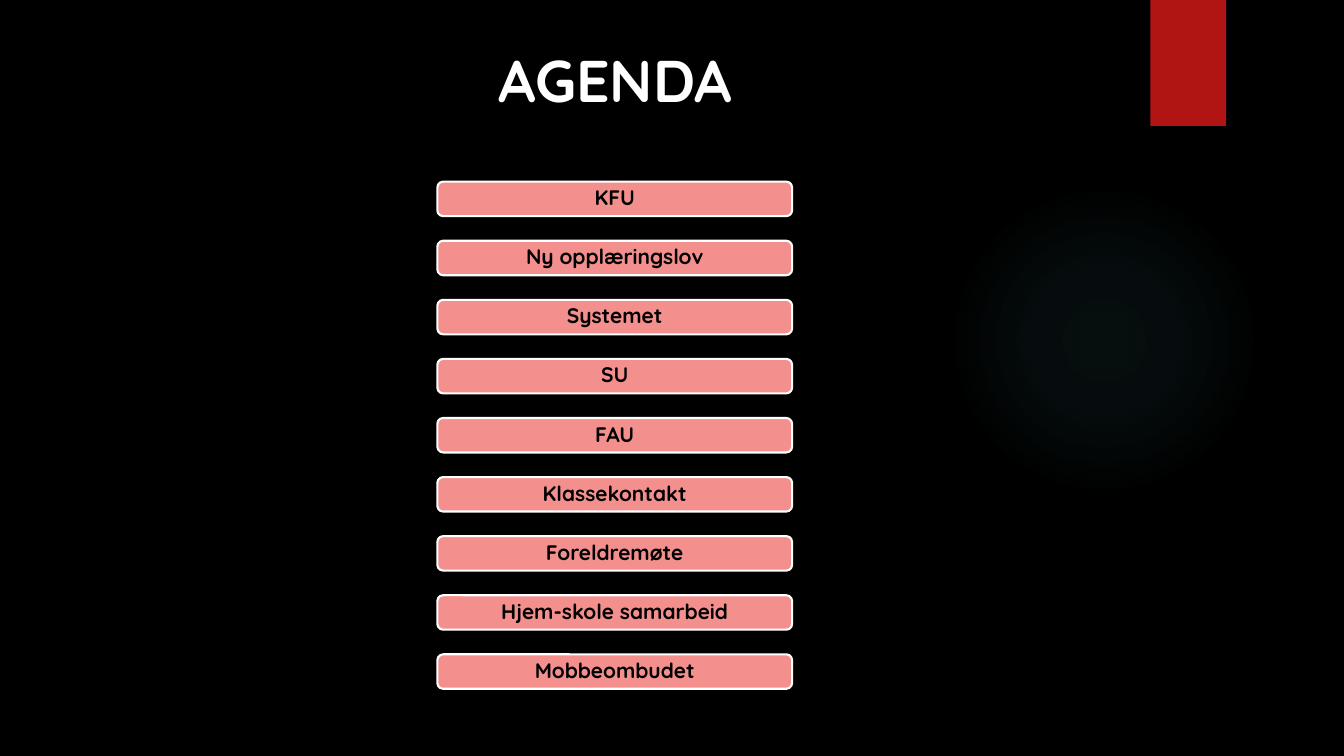
from pptx import Presentation
from pptx.dml.color import RGBColor
from pptx.enum.shapes import MSO_SHAPE
from pptx.enum.text import MSO_ANCHOR, PP_ALIGN
from pptx.oxml import parse_xml
from pptx.oxml.ns import nsdecls, qn
from pptx.util import Pt

COLORS = {
    "background": "000000",
    "glow": "50B9C1",
    "ribbon": "B01513",
    "bar": "F38F8D",
    "white": "FFFFFF",
    "black": "000000",
}
FONT = "Quicksand"
TOPICS = [
    "KFU", "Ny opplæringslov", "Systemet", "SU", "FAU", "Klassekontakt",
    "Foreldremøte", "Hjem-skole samarbeid", "Mobbeombudet",
]
BAR_LEFT, BAR_TOP, BAR_WIDTH, BAR_HEIGHT = 312.4, 129.8, 253.4, 24.6
BAR_PITCH = 42.2


def color(name):
    return RGBColor.from_string(COLORS[name])


def write_line(frame, text, size, color_name):
    """Put one centred bold line in a text frame."""
    paragraph = frame.paragraphs[0]
    paragraph.alignment = PP_ALIGN.CENTER
    run = paragraph.add_run()
    run.text = text
    run.font.name = FONT
    run.font.size = Pt(size)
    run.font.bold = True
    run.font.color.rgb = color(color_name)


prs = Presentation()
prs.slide_width, prs.slide_height = Pt(960), Pt(540)
slide = prs.slides.add_slide(prs.slide_layouts[6])
slide.background.fill.solid()
slide.background.fill.fore_color.rgb = color("background")

# Faint round glow, fading outwards
glow = slide.shapes.add_shape(MSO_SHAPE.OVAL, Pt(677.5), Pt(131.8), Pt(221.8), Pt(221.8))
glow.shadow.inherit = False
glow.line.fill.background()
glow.fill.background()
stops = "".join(
    f'<a:gs pos="{position * 1000}"><a:srgbClr val="{COLORS["glow"]}">'
    f'<a:alpha val="{opacity * 1000}"/></a:srgbClr></a:gs>'
    for position, opacity in [(0, 7), (36, 6), (69, 0)]
)
glow_fill = parse_xml(
    f'<a:gradFill {nsdecls("a")}><a:gsLst>{stops}</a:gsLst><a:path path="circle">'
    '<a:fillToRect l="50000" t="50000" r="50000" b="50000"/></a:path></a:gradFill>'
)
glow_properties = glow._element.spPr
glow_properties.replace(glow_properties.find(qn("a:noFill")), glow_fill)

# Red ribbon with a soft shadow below
ribbon = slide.shapes.add_shape(MSO_SHAPE.RECTANGLE, Pt(821.8), Pt(0), Pt(54), Pt(90))
ribbon.fill.solid()
ribbon.fill.fore_color.rgb = color("ribbon")
ribbon.line.fill.background()
ribbon.shadow.inherit = False
ribbon._element.spPr.find(qn("a:effectLst")).append(parse_xml(
    f'<a:outerShdw {nsdecls("a")} blurRad="{Pt(3)}" dist="{Pt(2)}" dir="5400000">'
    f'<a:srgbClr val="{COLORS["black"]}"><a:alpha val="45000"/></a:srgbClr></a:outerShdw>'
))

title = slide.shapes.add_textbox(Pt(69), Pt(28), Pt(741), Pt(83))
title.text_frame.word_wrap = True
write_line(title.text_frame, "AGENDA", 42, "white")

for row, topic in enumerate(TOPICS):
    bar = slide.shapes.add_shape(
        MSO_SHAPE.ROUNDED_RECTANGLE,
        Pt(BAR_LEFT), Pt(BAR_TOP + row * BAR_PITCH), Pt(BAR_WIDTH), Pt(BAR_HEIGHT),
    )
    bar.shadow.inherit = False
    bar.fill.solid()
    bar.fill.fore_color.rgb = color("bar")
    bar.line.color.rgb = color("white")
    bar.line.width = Pt(1.5)
    frame = bar.text_frame
    frame.word_wrap = True
    frame.vertical_anchor = MSO_ANCHOR.MIDDLE
    frame.margin_left = frame.margin_right = Pt(4.5)
    frame.margin_top = frame.margin_bottom = Pt(2.2)
    write_line(frame, topic, 15, "black")
    frame.paragraphs[0].line_spacing = 0.9

prs.save("out.pptx")
